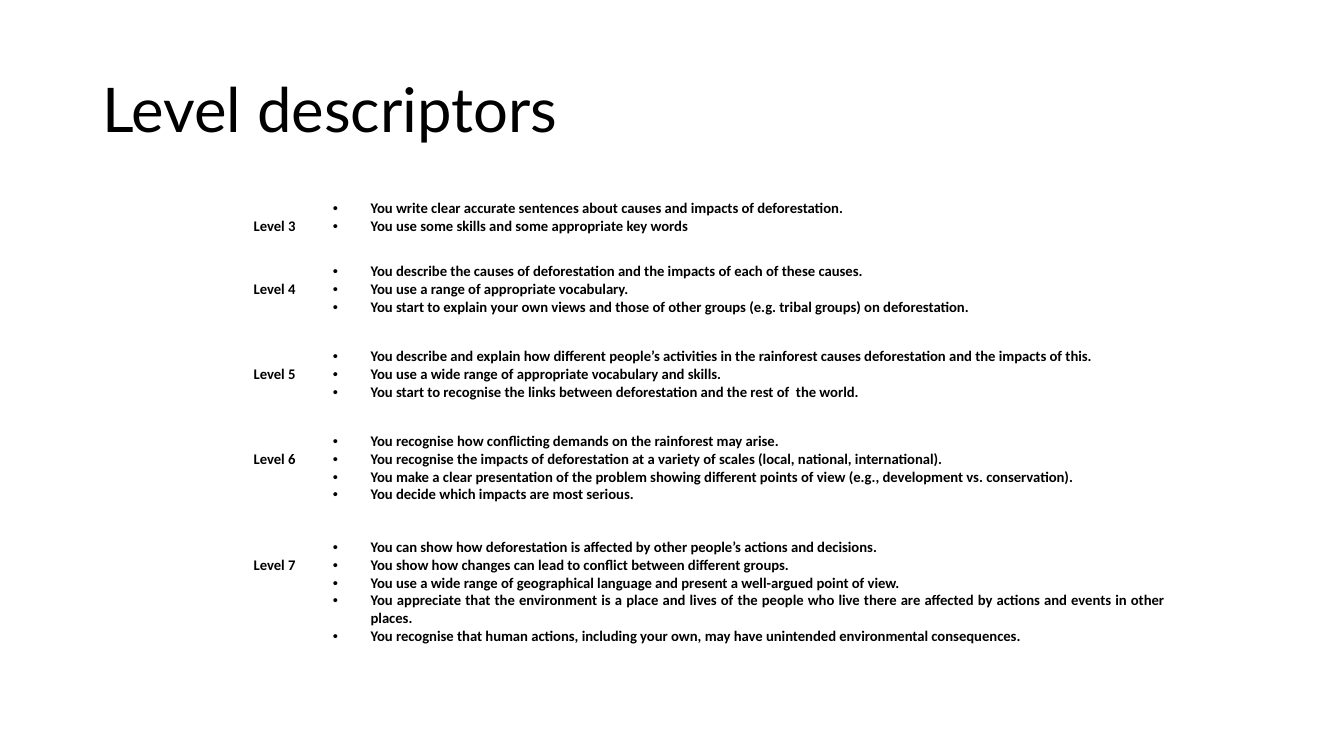
import pptx
import pptx.dml.color
import pptx.enum.text
import pptx.oxml
import pptx.oxml.ns
import pptx.util

PX = 9525  # EMU in one px, at 96 px to the inch
ALIGN = pptx.enum.text.PP_ALIGN
ANCHOR = pptx.enum.text.MSO_ANCHOR
BLACK, WHITE = "000000", "FFFFFF"
COLUMN_WIDTHS = (97, 807)
LINE_HEIGHT = 17
HANG = 36

# Level, row height, descriptors
LEVELS = [
    ("Level 3", 60, [
        "You write clear accurate sentences about causes and impacts of deforestation.",
        "You use some skills and some appropriate key words",
    ]),
    ("Level 4", 81, [
        "You describe the causes of deforestation and the impacts of each of these causes.",
        "You use a range of appropriate vocabulary.",
        "You start to explain your own views and those of other groups (e.g. tribal groups) on deforestation.",
    ]),
    ("Level 5", 81, [
        "You describe and explain how different people’s activities in the rainforest causes deforestation "
        "and the impacts of this.",
        "You use a wide range of appropriate vocabulary and skills.",
        "You start to recognise the links between deforestation and the rest of  the world.",
    ]),
    ("Level 6", 101, [
        "You recognise how conflicting demands on the rainforest may arise.",
        "You recognise the impacts of deforestation at a variety of scales (local, national, international).",
        "You make a clear presentation of the problem showing different points of view "
        "(e.g., development vs. conservation).",
        "You decide which impacts are most serious.",
    ]),
    ("Level 7", 141, [
        "You can show how deforestation is affected by other people’s actions and decisions.",
        "You show how changes can lead to conflict between different groups.",
        "You use a wide range of geographical language and present a well-argued point of view.",
        "You appreciate that the environment is a place and lives of the people who live there are affected "
        "by actions and events in other places.",
        "You recognise that human actions, including your own, may have unintended environmental consequences.",
    ]),
]


def px(n):
    return pptx.util.Emu(n * PX)


def rgb(color):
    return pptx.dml.color.RGBColor.from_string(color)


def xml(tag, **attrs):
    el = pptx.oxml.parse_xml(f"<a:{tag} {pptx.oxml.ns.nsdecls('a')}/>")
    for name, value in attrs.items():
        el.set(name, str(value))
    return el


def write(tf, lines, size, font, color=BLACK, bold=False, align=ALIGN.LEFT, spacing=None, bullet=None):
    """Fill a text frame with one paragraph per line."""
    for i, line in enumerate(lines):
        p = tf.paragraphs[0] if i == 0 else tf.add_paragraph()
        p.alignment = align
        if spacing:
            p.line_spacing = spacing
        if bullet:
            pPr = p._p.get_or_add_pPr()
            pPr.set("marL", str(px(HANG)))
            pPr.set("indent", str(px(-HANG)))
            pPr.append(xml("buFont", typeface="Arial"))
            pPr.append(xml("buChar", char=bullet))
        r = p.add_run()
        r.text = line
        r.font.size = pptx.util.Pt(size)
        r.font.name = font
        r.font.bold = bold
        r.font.color.rgb = rgb(color)


def style_cell(cell, top, bottom, margin_top=0):
    """Set white fill, margins and white borders; top and bottom are in points."""
    cell.margin_left = cell.margin_right = px(7)
    cell.margin_top, cell.margin_bottom = px(margin_top), 0
    cell.vertical_anchor = ANCHOR.TOP
    tcPr = cell._tc.get_or_add_tcPr()
    for side, width in (("lnL", 1), ("lnR", 1), ("lnT", top), ("lnB", bottom)):
        ln = xml(side, w=pptx.util.Pt(width))
        fill = xml("solidFill")
        fill.append(xml("srgbClr", val=WHITE))
        ln.append(fill)
        tcPr.append(ln)
    cell.fill.solid()
    cell.fill.fore_color.rgb = rgb(WHITE)


def add_title(slide, text, x, y, w, h):
    tf = slide.shapes.add_textbox(px(x), px(y), px(w), px(h)).text_frame
    tf.word_wrap = True
    tf.vertical_anchor = ANCHOR.MIDDLE
    write(tf, [text], 44, "Lato", spacing=0.9)


def add_levels(slide, levels, x, y):
    width, height = sum(COLUMN_WIDTHS), sum(h for _, h, _ in levels)
    table = slide.shapes.add_table(len(levels), 2, px(x), px(y), px(width), px(height)).table
    table.first_row = table.horz_banding = False
    for column, w in zip(table.columns, COLUMN_WIDTHS):
        column.width = px(w)
    last = len(levels) - 1
    for i, (level, h, descriptors) in enumerate(levels):
        table.rows[i].height = px(h)
        label, body = table.cell(i, 0), table.cell(i, 1)
        top = 3 if i in (1, last) else 1
        bottom = 3 if i in (0, last - 1) else 1
        style_cell(label, top, bottom, margin_top=LINE_HEIGHT)
        style_cell(body, top, bottom)
        write(label.text_frame, [level], 10.5, "Calibri", bold=True, align=ALIGN.CENTER)
        write(body.text_frame, descriptors, 10.5, "Calibri", bold=True, align=ALIGN.JUSTIFY, bullet="•")


def main():
    prs = pptx.Presentation()
    prs.slide_width, prs.slide_height = px(1280), px(720)
    slide = prs.slides.add_slide(prs.slide_layouts[6])
    slide.background.fill.solid()
    slide.background.fill.fore_color.rgb = rgb(WHITE)
    add_title(slide, "Level descriptors", 88, 38, 1104, 139)
    add_levels(slide, LEVELS, 213, 190)
    prs.save("out.pptx")


if __name__ == "__main__":
    main()
